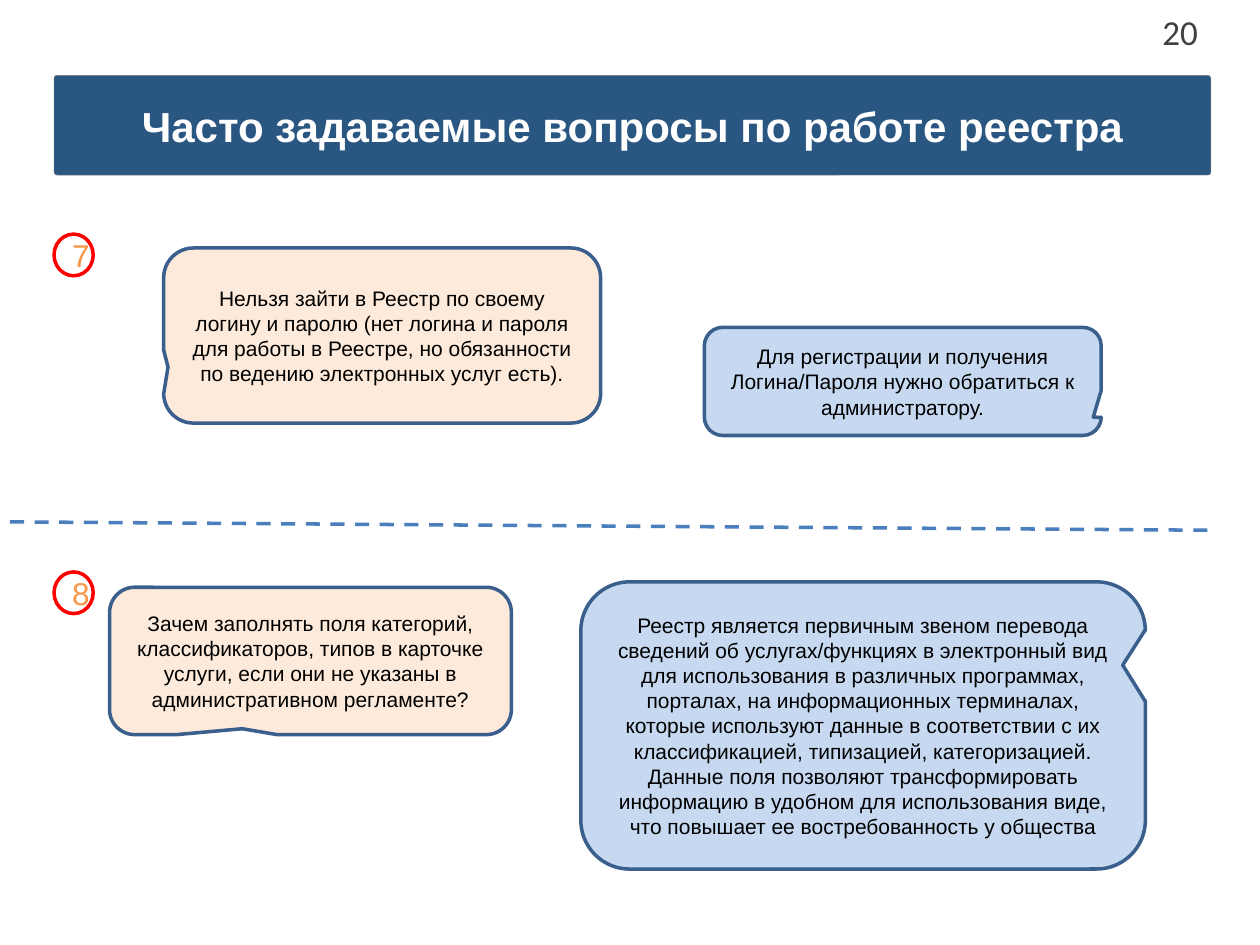
"""Build the FAQ slide with two numbered question and answer pairs."""
import pptx
import pptx.dml.color
import pptx.enum.dml
import pptx.enum.shapes
import pptx.enum.text
import pptx.oxml
import pptx.util

Cm, Pt = pptx.util.Cm, pptx.util.Pt
RGBColor = pptx.dml.color.RGBColor
MSO_SHAPE = pptx.enum.shapes.MSO_SHAPE
PP_ALIGN = pptx.enum.text.PP_ALIGN
MSO_ANCHOR = pptx.enum.text.MSO_ANCHOR

WHITE = RGBColor(0xFF, 0xFF, 0xFF)
BLACK = RGBColor(0x00, 0x00, 0x00)
NAVY = RGBColor(0x2A, 0x57, 0x81)
GRAY = RGBColor(0x80, 0x80, 0x80)
DARK_GRAY = RGBColor(0x40, 0x40, 0x40)
RED = RGBColor(0xFF, 0x00, 0x00)
ORANGE = RGBColor(0xF7, 0x96, 0x46)
DASH_BLUE = RGBColor(0x4B, 0x7E, 0xBC)
OUTLINE = RGBColor(0x3A, 0x5F, 0x8C)
QUESTION = RGBColor(0xFD, 0xEA, 0xDA)
ANSWER = RGBColor(0xC6, 0xD9, 0xF1)


class SlideBuilder:
    def __init__(self, slide, font="Arial"):
        self.slide = slide
        self.font = font

    def label(self, sp, text, size, color, align=PP_ALIGN.CENTER,
              anchor=MSO_ANCHOR.MIDDLE, font=None, bold=False):
        tf = sp.text_frame
        tf.word_wrap = True
        tf.vertical_anchor = anchor
        tf.text = text
        p = tf.paragraphs[0]
        p.alignment = align
        r = p.runs[0]
        r.font.name = font or self.font
        r.font.size = Pt(size)
        r.font.bold = bold
        r.font.color.rgb = color

    def shape(self, kind, box, fill, line, width, adjustments=()):
        sp = self.slide.shapes.add_shape(kind, *map(Cm, box))
        sp.shadow.inherit = False
        if fill is None:
            sp.fill.background()
        else:
            sp.fill.solid()
            sp.fill.fore_color.rgb = fill
        sp.line.color.rgb = line
        sp.line.width = Pt(width)
        for i, value in enumerate(adjustments):
            sp.adjustments[i] = value
        return sp

    def title(self, text, box):
        sp = self.shape(MSO_SHAPE.ROUNDED_RECTANGLE, box, NAVY, GRAY, 0.25, [0.03])
        self.label(sp, text, 24, WHITE, bold=True)

    def number(self, text, top):
        sp = self.shape(MSO_SHAPE.OVAL, (1.09, top, 0.79, 0.84), None, RED, 2)
        self.label(sp, text, 18, ORANGE)

    def callout(self, text, box, fill, tip):
        sp = self.shape(MSO_SHAPE.ROUNDED_RECTANGULAR_CALLOUT, box, fill,
                        OUTLINE, 2, (*tip, 0.17))
        self.label(sp, text, 12, BLACK)

    def divider(self, *ends):
        cxn = self.slide.shapes.add_connector(
            pptx.enum.shapes.MSO_CONNECTOR.STRAIGHT, *map(Cm, ends))
        cxn.line.color.rgb = DASH_BLUE
        cxn.line.width = Pt(2)
        cxn.line.dash_style = pptx.enum.dml.MSO_LINE.DASH
        cxn._element.spPr.append(pptx.oxml.parse_xml(
            '<a:effectLst xmlns:a="http://schemas.openxmlformats.org/drawingml/2006/main"/>'))

    def page_number(self, text, box):
        sp = self.slide.shapes.add_textbox(*map(Cm, box))
        self.label(sp, text, 20, DARK_GRAY, PP_ALIGN.RIGHT, MSO_ANCHOR.TOP, "Calibri")


def main():
    prs = pptx.Presentation()
    prs.slide_width, prs.slide_height = Cm(25.4), Cm(19.05)
    s = SlideBuilder(prs.slides.add_slide(prs.slide_layouts[6]))

    s.title("Часто задаваемые вопросы по работе реестра", (1.09, 1.52, 23.32, 2.01))
    s.number("7", 4.72)
    s.divider(0.2, 10.52, 24.54, 10.69)
    s.number("8", 11.53)
    s.callout(
        "Реестр является первичным звеном перевода сведений об услугах/функциях "
        "в электронный вид для использования в различных программах, порталах, "
        "на информационных терминалах, которые используют данные в соответствии "
        "с их классификацией, типизацией, категоризацией. Данные поля позволяют "
        "трансформировать информацию в удобном для использования виде, "
        "что повышает ее востребованность у общества",
        (11.71, 11.73, 11.38, 5.79), ANSWER, (0.46, -0.21))
    s.callout(
        "Зачем заполнять поля категорий, классификаторов, типов в карточке услуги, "
        "если они не указаны в административном регламенте?",
        (2.21, 11.84, 8.1, 2.97), QUESTION, (-0.17, 0.46))
    s.callout(
        "Нельзя зайти в Реестр по своему логину и паролю (нет логина и пароля "
        "для работы в Реестре, но обязанности по ведению электронных услуг есть).",
        (3.3, 5, 8.81, 3.53), QUESTION, (-0.49, 0.18))
    s.callout(
        "Для регистрации и получения Логина/Пароля нужно обратиться к администратору.",
        (14.2, 6.6, 8, 2.18), ANSWER, (0.48, 0.33))
    s.page_number("20", (22.83, 0.08, 1.57, 1.02))

    prs.save("out.pptx")


if __name__ == "__main__":
    main()
